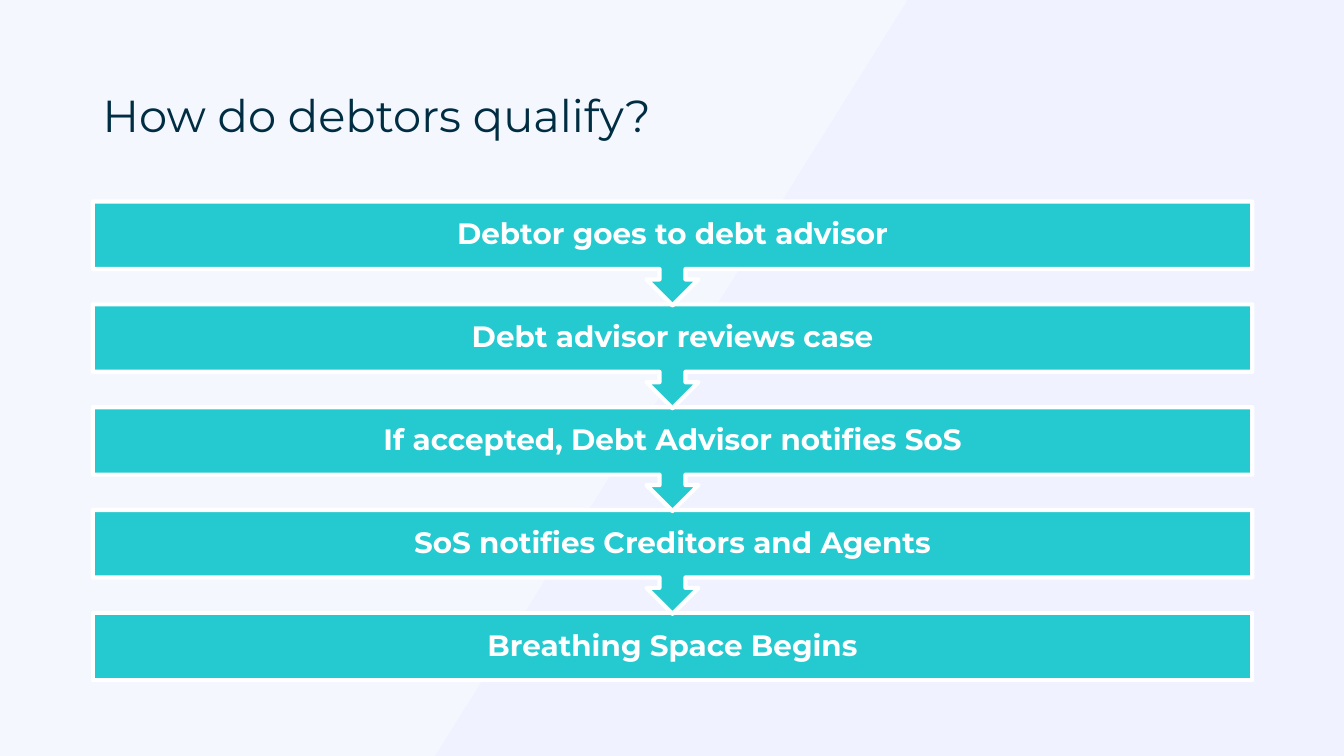
from pptx import Presentation, util as u
from pptx.dml.color import RGBColor
from pptx.enum import shapes, text

Inches = u.Inches


def paint(fill, colour):
    fill.solid()
    fill.fore_color.rgb = RGBColor.from_string(colour)


def write(shape, wording, margin, align, font):
    frame = shape.text_frame
    frame.word_wrap = True
    frame.vertical_anchor = text.MSO_ANCHOR.MIDDLE
    for side, inset in margin.items():
        setattr(frame, f"margin_{side}", Inches(inset))
    paragraph = frame.paragraphs[0]
    paragraph.alignment = align
    paragraph.line_spacing = 0.9
    run = paragraph.add_run()
    run.text = wording
    for name, value in font.items():
        if name == "colour":
            paint(run.font.fill, value)
        else:
            setattr(run.font, name, value)


prs = Presentation()
prs.slide_width, prs.slide_height = Inches(13.33), Inches(7.5)
slide = prs.slides.add_slide(prs.slide_layouts[6])

# Background with a pale slanted panel
paint(slide.background.fill, "F0F3FF")
outline = slide.shapes.build_freeform(0, 0, scale=Inches(1))
outline.add_line_segments([(8.66, 0), (4.36, 7.5), (0, 7.5)], close=True)
panel = outline.convert_to_shape()
paint(panel.fill, "F5F7FF")
panel.line.fill.background()
panel.shadow.inherit = False

# Title
left, width = Inches(0.92), Inches(11.5)
title = slide.shapes.add_textbox(left, Inches(0.45), width, Inches(1.45))
write(title, "How do debtors qualify?",
      {"left": 0.1, "right": 0.1, "top": 0.05, "bottom": 0.05},
      text.PP_ALIGN.LEFT,
      {"name": "Montserrat", "size": u.Pt(32), "colour": "002D41"})

# Steps, drawn from the last upwards so each arrow lies over the next step
steps = [
    "Debtor goes to debt advisor",
    "Debt advisor reviews case",
    "If accepted, Debt Advisor notifies SoS",
    "SoS notifies Creditors and Agents",
    "Breathing Space Begins",
]
step_font = {"name": "Montserrat", "size": u.Pt(21), "bold": True, "colour": "FFFFFF"}
step_margin = dict.fromkeys(("left", "right", "top", "bottom"), 0.16)
last = len(steps) - 1
for i in range(last, -1, -1):
    if i == last:
        kind, height = shapes.MSO_SHAPE.RECTANGLE, 0.67
    else:
        kind, height = shapes.MSO_SHAPE.DOWN_ARROW_CALLOUT, 1.03
    step = slide.shapes.add_shape(kind, left, Inches(2 + 1.02 * i), width, Inches(height))
    step.shadow.inherit = False
    paint(step.fill, "25C9D0")
    paint(step.line.fill, "FFFFFF")
    step.line.width = u.Pt(3)
    write(step, steps[i], step_margin, text.PP_ALIGN.CENTER, step_font)

prs.save("out.pptx")
